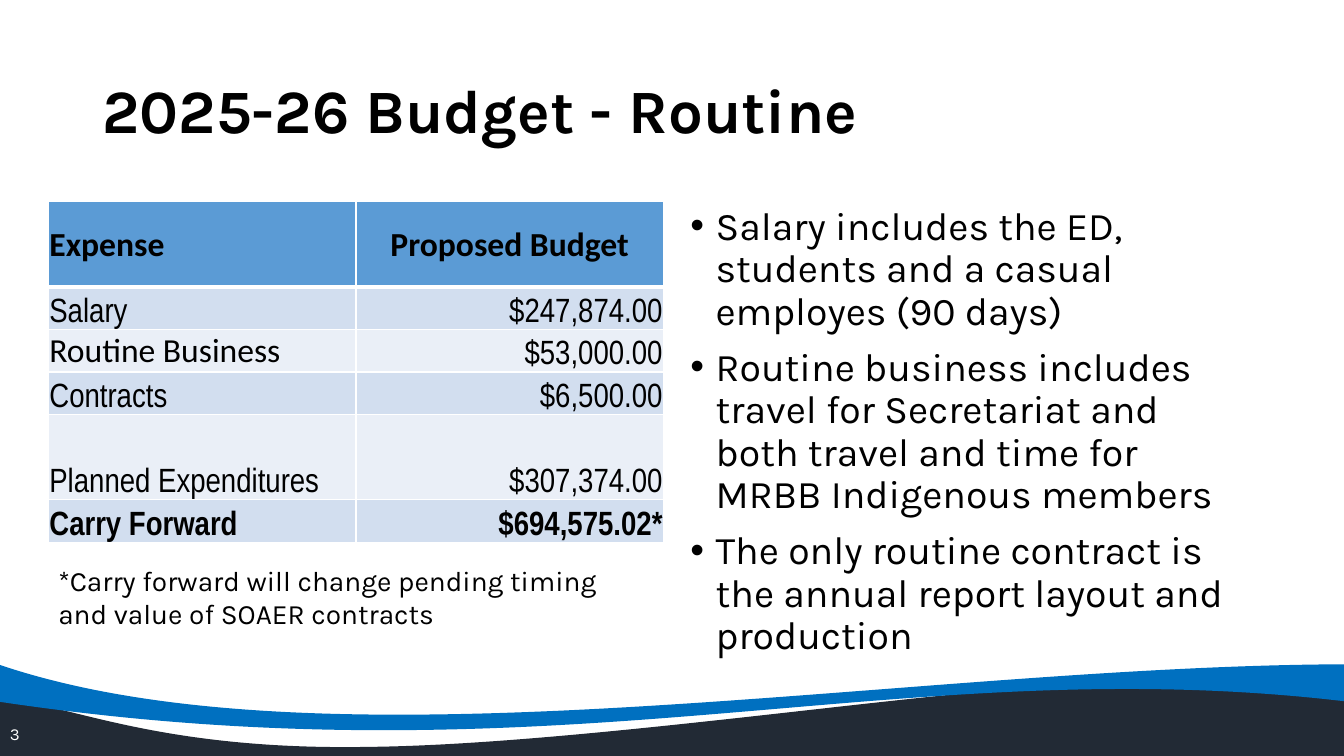
from lxml.etree import SubElement
from pptx import Presentation
from pptx.dml.color import RGBColor
from pptx.enum.text import MSO_ANCHOR, PP_ALIGN
from pptx.oxml import parse_xml
from pptx.oxml.ns import nsdecls, qn
from pptx.util import Pt

PX = 9144  # 100 px to the inch
BLACK, WHITE = "000000", "FFFFFF"
NAVY, BLUE = "222A35", "0070C0"
HEAD, BANDS = "5B9BD5", ("D2DEEF", "EAEFF7")
LEFT, MID, RIGHT = PP_ALIGN.LEFT, PP_ALIGN.CENTER, PP_ALIGN.RIGHT

ROWS = [
    ("Expense", "Proposed Budget"),
    ("Salary", "$247,874.00"),
    ("Routine Business", "$53,000.00"),
    ("Contracts", "$6,500.00"),
    ("Planned Expenditures", "$307,374.00"),
    ("Carry Forward", "$694,575.02*"),
]
SHARES = [2, 1, 1, 1, 2, 1]
POINTS = [
    "Salary includes the ED, students and a casual employes (90 days)",
    "Routine business includes travel for Secretariat and both travel "
    "and time for MRBB Indigenous members",
    "The only routine contract is the annual report layout and production",
]
# Each wave is a start point, then line ends (2 numbers) or curves (6 numbers).
DARK_WAVE = [
    (-2, 695),
    (57, 692, 143, 745, 366, 741),
    (547, 739, 826, 699, 988, 685),
    (1150, 671, 1351, 648, 1337, 667),
    (1336, 695, 1336, 722, 1336, 750),
    (-1, 750),
]
BLUE_WAVE = [
    (-2, 659),
    (326, 771, 898, 660, 1336, 659),
    (1336, 696),
    (891, 643, 566, 781, -2, 696),
]


def color(code):
    return RGBColor.from_string(code)


def write(para, text, size=24, font="Karla", ink=BLACK, bold=False,
          align=LEFT, line=None, before=0, bullet=False):
    if bullet:
        props = para._p.get_or_add_pPr()
        props.set("marL", str(25 * PX))
        props.set("indent", str(-25 * PX))
        SubElement(props, qn("a:buFont")).set("typeface", "Arial")
        SubElement(props, qn("a:buChar")).set("char", "•")
    para.alignment = align
    if line:
        para.line_spacing = line
    if before:
        para.space_before = Pt(before)
    run = para.add_run()
    run.text = text
    run.font.size = Pt(size)
    run.font.name = font
    run.font.bold = bold
    run.font.color.rgb = color(ink)


class Deck:
    def __init__(self):
        self.show = Presentation()
        self.show.slide_width = 1333 * PX
        self.show.slide_height = 750 * PX
        self.slide = self.show.slides.add_slide(self.show.slide_layouts[6])

    def wave(self, box, parts, fill):
        """Frame the box as a freeform, then put the curved outline in it."""
        left, top, width, height = box
        pen = self.slide.shapes.build_freeform(left, top, scale=PX)
        pen.add_line_segments([(left + width, top),
                               (left + width, top + height),
                               (left, top + height)])
        shape = pen.convert_to_shape()
        path = next(shape._element.iter(qn("a:path")))
        for old in list(path):
            path.remove(old)
        for i, part in enumerate(parts):
            kind = "cubicBezTo" if len(part) == 6 else "lnTo"
            step = SubElement(path, qn(f"a:{kind if i else 'moveTo'}"))
            for x, y in zip(part[::2], part[1::2]):
                dot = SubElement(step, qn("a:pt"))
                dot.set("x", str(x - left))
                dot.set("y", str(y - top))
        SubElement(path, qn("a:close"))
        shape.shadow.inherit = False
        shape.fill.solid()
        shape.fill.fore_color.rgb = color(fill)
        shape.line.fill.background()

    def text(self, box, lines, anchor=MSO_ANCHOR.TOP, gap=0, **style):
        spots = [n * PX for n in box]
        frame = self.slide.shapes.add_textbox(*spots).text_frame
        frame.word_wrap = True
        frame.vertical_anchor = anchor
        for i, text in enumerate(lines):
            para = frame.add_paragraph() if i else frame.paragraphs[0]
            write(para, text, before=gap if i else 0, **style)

    def table(self, box, rows, shares):
        spots = [n * PX for n in box]
        grid = self.slide.shapes.add_table(
            len(rows), len(rows[0]), *spots).table
        for r, row in enumerate(rows):
            grid.rows[r].height = spots[3] * shares[r] // sum(shares)
            for c, text in enumerate(row):
                self.cell(grid.cell(r, c), text, r, c)

    def cell(self, cell, text, r, c):
        head = r == 0
        plain = text == "Routine Business"
        cell.margin_left = cell.margin_right = cell.margin_top = PX
        cell.margin_bottom = 0
        cell.vertical_anchor = (
            MSO_ANCHOR.MIDDLE if head or plain else MSO_ANCHOR.BOTTOM)
        cell.fill.solid()
        cell.fill.fore_color.rgb = color(HEAD if head else BANDS[(r - 1) % 2])
        self.edges(cell, base=3 if head else 1)
        write(cell.text_frame.paragraphs[0], text,
              font="Calibri" if head or plain else "Arial Narrow",
              bold=head or r == len(ROWS) - 1,
              align=LEFT if c == 0 else MID if head else RIGHT)

    def edges(self, cell, base):
        props = cell._tc.get_or_add_tcPr()
        sides = {"L": 1, "R": 1, "T": 1, "B": base}
        for i, (side, width) in enumerate(sides.items()):
            props.insert(i, parse_xml(
                f'<a:ln{side} {nsdecls("a")} w="{Pt(width)}"><a:solidFill>'
                f'<a:srgbClr val="{WHITE}"/></a:solidFill></a:ln{side}>'))


def main():
    deck = Deck()
    deck.wave((-2, 660, 1339, 90), DARK_WAVE, NAVY)
    deck.wave((-2, 659, 1339, 65), BLUE_WAVE, BLUE)
    deck.text((92, 40, 1150, 145), ["2025-26 Budget - Routine"],
              anchor=MSO_ANCHOR.MIDDLE, size=44, bold=True, line=0.9)
    deck.text((675, 200, 567, 476), POINTS, gap=10, size=28, line=0.9,
              bullet=True)
    deck.text((0, 708, 300, 40), ["3"], anchor=MSO_ANCHOR.MIDDLE,
              size=12, ink=WHITE)
    deck.table((48, 200, 610, 338), ROWS, SHARES)
    deck.text((48, 554, 604, 77),
              ["*Carry forward will change pending timing and value of "
               "SOAER contracts"], size=20)
    deck.show.save("out.pptx")


if __name__ == "__main__":
    main()
